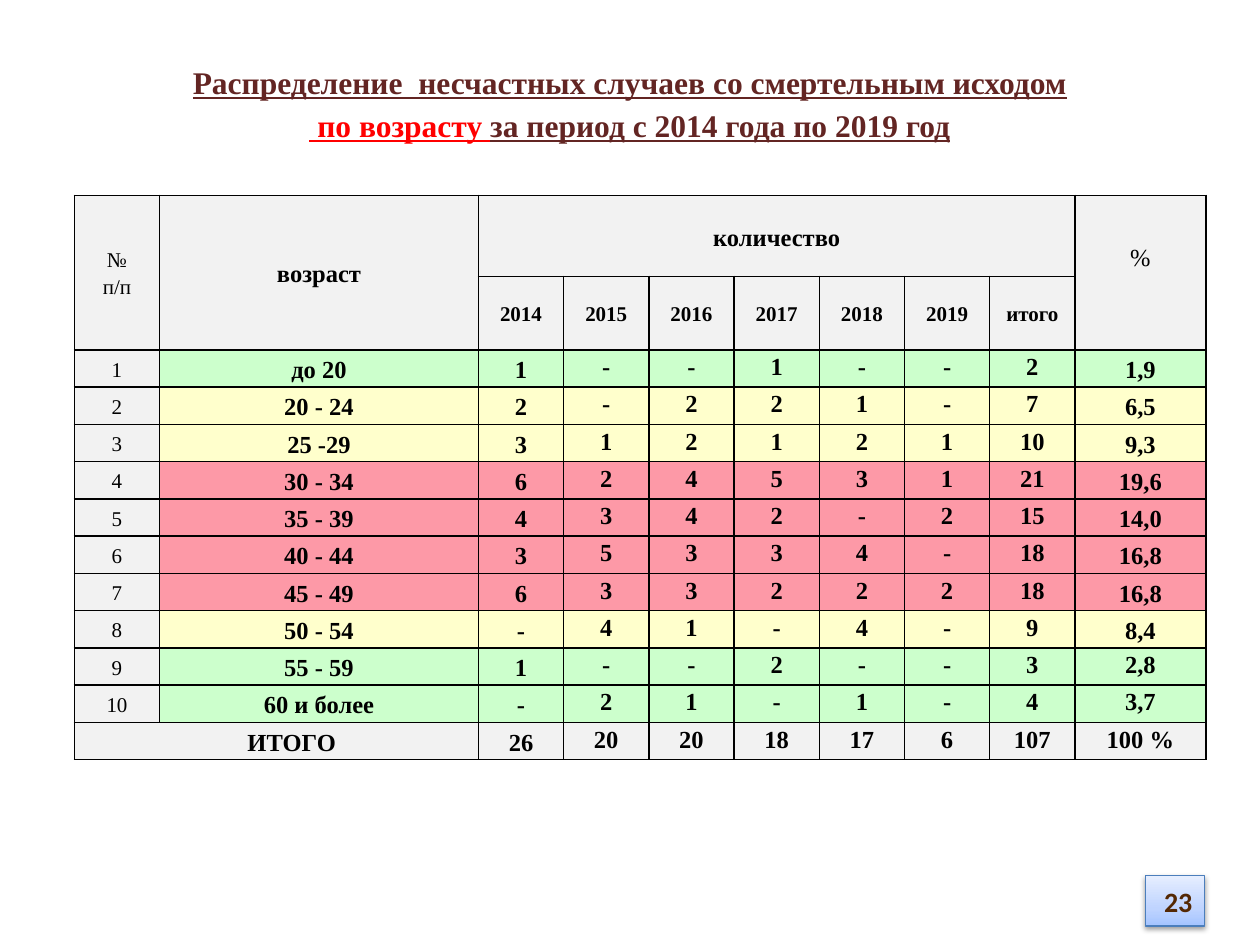
from pptx import Presentation
from pptx.dml.color import RGBColor
from pptx.enum.shapes import MSO_SHAPE
from pptx.enum.text import MSO_ANCHOR, PP_ALIGN
from pptx.oxml import parse_xml
from pptx.oxml.ns import nsdecls
from pptx.util import Pt

BLACK = RGBColor(0x00, 0x00, 0x00)
MAROON = RGBColor(0x63, 0x25, 0x23)
RED = RGBColor(0xFF, 0x00, 0x00)
GREY = RGBColor(0xF2, 0xF2, 0xF2)
GREEN = RGBColor(0xCC, 0xFF, 0xCC)
YELLOW = RGBColor(0xFF, 0xFF, 0xCC)
PINK = RGBColor(0xFD, 0x99, 0xA7)
BROWN = RGBColor(0x54, 0x28, 0x04)
BLUE = RGBColor(0x4B, 0x7E, 0xBC)
BADGE_STOPS = (
    (0, RGBColor(0xA4, 0xC4, 0xFF)),
    (35, RGBColor(0xBF, 0xD4, 0xFF)),
    (100, RGBColor(0xE6, 0xEE, 0xFF)),
)

SERIF = "Times New Roman"
COLUMN_WIDTHS = [48.7, 182.2] + [48.7] * 7 + [74.8]
ROW_HEIGHTS = [46.3, 42] + [21.3] * 11
YEAR_HEADINGS = ["2014", "2015", "2016", "2017", "2018", "2019", "итого"]
AGE_ROWS = [
    (GREEN, "до 20", "1 - - 1 - - 2 1,9"),
    (YELLOW, "20 - 24", "2 - 2 2 1 - 7 6,5"),
    (YELLOW, "25 -29", "3 1 2 1 2 1 10 9,3"),
    (PINK, "30 - 34", "6 2 4 5 3 1 21 19,6"),
    (PINK, "35 - 39", "4 3 4 2 - 2 15 14,0"),
    (PINK, "40 - 44", "3 5 3 3 4 - 18 16,8"),
    (PINK, "45 - 49", "6 3 3 2 2 2 18 16,8"),
    (YELLOW, "50 - 54", "- 4 1 - 4 - 9 8,4"),
    (GREEN, "55 - 59", "1 - - 2 - - 3 2,8"),
    (GREEN, "60 и более", "- 2 1 - 1 - 4 3,7"),
]
TOTALS = ["26", "20", "20", "18", "17", "6", "107", "100 %"]
TOTAL_ROW = len(ROW_HEIGHTS) - 1
PERCENT_COLUMN = len(COLUMN_WIDTHS) - 1


def add_title(slide):
    """Place and format the two-line title."""
    title = slide.shapes.title
    title.left, title.top, title.width, title.height = Pt(36), Pt(21.6), Pt(648), Pt(90)
    frame = title.text_frame
    frame.word_wrap = True
    frame.vertical_anchor = MSO_ANCHOR.MIDDLE
    frame.margin_bottom = Pt(22)
    paragraph = frame.paragraphs[0]
    paragraph.alignment = PP_ALIGN.CENTER
    paragraph.line_spacing = 1.15
    font = paragraph.font
    font.name, font.size, font.bold, font.underline = SERIF, Pt(18), True, True
    parts = (
        ("Распределение  несчастных случаев со смертельным исходом", MAROON),
        (" по возрасту ", RED),
        ("за период с 2014 года по 2019 год", MAROON),
    )
    for index, (text, color) in enumerate(parts):
        run = paragraph.add_run()
        run.text = text
        run.font.color.rgb = color
        if index == 0:
            paragraph.add_line_break()


def format_cell(cell, fill):
    """Give a cell its black borders, insets and fill."""
    properties = cell._tc.get_or_add_tcPr()
    for side in ("lnL", "lnR", "lnT", "lnB"):
        properties.append(parse_xml(
            f'<a:{side} {nsdecls("a")} w="12700"><a:solidFill>'
            f'<a:srgbClr val="{BLACK}"/></a:solidFill></a:{side}>'
        ))
    cell.fill.solid()
    cell.fill.fore_color.rgb = fill
    cell.margin_left = cell.margin_right = Pt(5)
    cell.margin_top = cell.margin_bottom = 0


def write_cell(cell, text, size=14, bold=True, anchor=MSO_ANCHOR.MIDDLE):
    """Write centred text into a cell, one paragraph per line."""
    cell.text = text
    cell.vertical_anchor = anchor
    for paragraph in cell.text_frame.paragraphs:
        paragraph.alignment = PP_ALIGN.CENTER
        paragraph.line_spacing = 1.15
        font = paragraph.font
        font.name, font.size, font.bold = SERIF, Pt(size), bold
        font.color.rgb = BLACK


def write_values(table, row, values):
    """Write the yearly counts, their sum and the share of one row."""
    for column, value in enumerate(values, start=2):
        is_middle = column == 2 or (column == PERCENT_COLUMN and row < TOTAL_ROW - 2)
        anchor = MSO_ANCHOR.MIDDLE if is_middle else MSO_ANCHOR.TOP
        write_cell(table.cell(row, column), value, anchor=anchor)


def write_header(table):
    """Merge and fill the two header rows."""
    for column in (0, 1, PERCENT_COLUMN):
        table.cell(0, column).merge(table.cell(1, column))
    table.cell(0, 2).merge(table.cell(0, PERCENT_COLUMN - 1))
    write_cell(table.cell(0, 0), "№\nп/п", size=12, bold=False)
    write_cell(table.cell(0, 1), "возраст")
    write_cell(table.cell(0, 2), "количество")
    percent = table.cell(0, PERCENT_COLUMN)
    write_cell(percent, "%", bold=False)
    percent.margin_bottom = Pt(18.5)
    for column, heading in enumerate(YEAR_HEADINGS, start=2):
        write_cell(table.cell(1, column), heading, size=12)


def add_age_table(slide):
    """Add the table of accidents by age and year."""
    frame = slide.shapes.add_table(
        len(ROW_HEIGHTS), len(COLUMN_WIDTHS), Pt(42.5), Pt(111.6),
        Pt(sum(COLUMN_WIDTHS)), Pt(sum(ROW_HEIGHTS)),
    )
    table = frame.table
    for column, width in zip(table.columns, COLUMN_WIDTHS):
        column.width = Pt(width)
    row_fills = [GREY, GREY] + [fill for fill, _, _ in AGE_ROWS] + [GREY]
    for row, (height, fill) in enumerate(zip(ROW_HEIGHTS, row_fills)):
        table.rows[row].height = Pt(height)
        for column in range(len(COLUMN_WIDTHS)):
            format_cell(table.cell(row, column), fill if column else GREY)
    write_header(table)
    for number, (_, age, values) in enumerate(AGE_ROWS, start=1):
        row = number + 1
        write_cell(table.cell(row, 0), str(number), size=12, bold=False)
        write_cell(table.cell(row, 1), age)
        write_values(table, row, values.split())
    total = table.cell(TOTAL_ROW, 0)
    total.merge(table.cell(TOTAL_ROW, 1))
    write_cell(total, "ИТОГО")
    total.margin_left = Pt(22.5)
    write_values(table, TOTAL_ROW, TOTALS)


def add_page_badge(slide):
    """Add the shaded box with the page number."""
    badge = slide.shapes.add_shape(
        MSO_SHAPE.RECTANGLE, Pt(654.5), Pt(500.4), Pt(34), Pt(28.8)
    )
    stops = "".join(
        f'<a:gs pos="{position * 1000}"><a:srgbClr val="{color}"/></a:gs>'
        for position, color in BADGE_STOPS
    )
    properties = badge._element.spPr
    properties.append(parse_xml(
        f'<a:gradFill {nsdecls("a")} rotWithShape="1"><a:gsLst>{stops}</a:gsLst>'
        '<a:lin ang="16200000" scaled="1"/></a:gradFill>'
    ))
    badge.line.color.rgb = BLUE
    badge.line.width = Pt(0.75)
    badge.shadow.inherit = False
    properties[-1].append(parse_xml(
        f'<a:outerShdw {nsdecls("a")} blurRad="{Pt(3.1)}" dist="{Pt(1.6)}" '
        f'dir="5400000" rotWithShape="0"><a:srgbClr val="{BLACK}">'
        '<a:alpha val="38000"/></a:srgbClr></a:outerShdw>'
    ))
    frame = badge.text_frame
    frame.vertical_anchor = MSO_ANCHOR.MIDDLE
    paragraph = frame.paragraphs[0]
    paragraph.text = "23"
    paragraph.alignment = PP_ALIGN.RIGHT
    font = paragraph.font
    font.name, font.size, font.bold = "Calibri", Pt(16), True
    font.color.rgb = BROWN


def main():
    """Build and save the slide."""
    presentation = Presentation()
    presentation.slide_width, presentation.slide_height = Pt(720), Pt(540)
    slide = presentation.slides.add_slide(presentation.slide_layouts[5])
    add_title(slide)
    add_age_table(slide)
    add_page_badge(slide)
    presentation.save("out.pptx")


if __name__ == "__main__":
    main()
